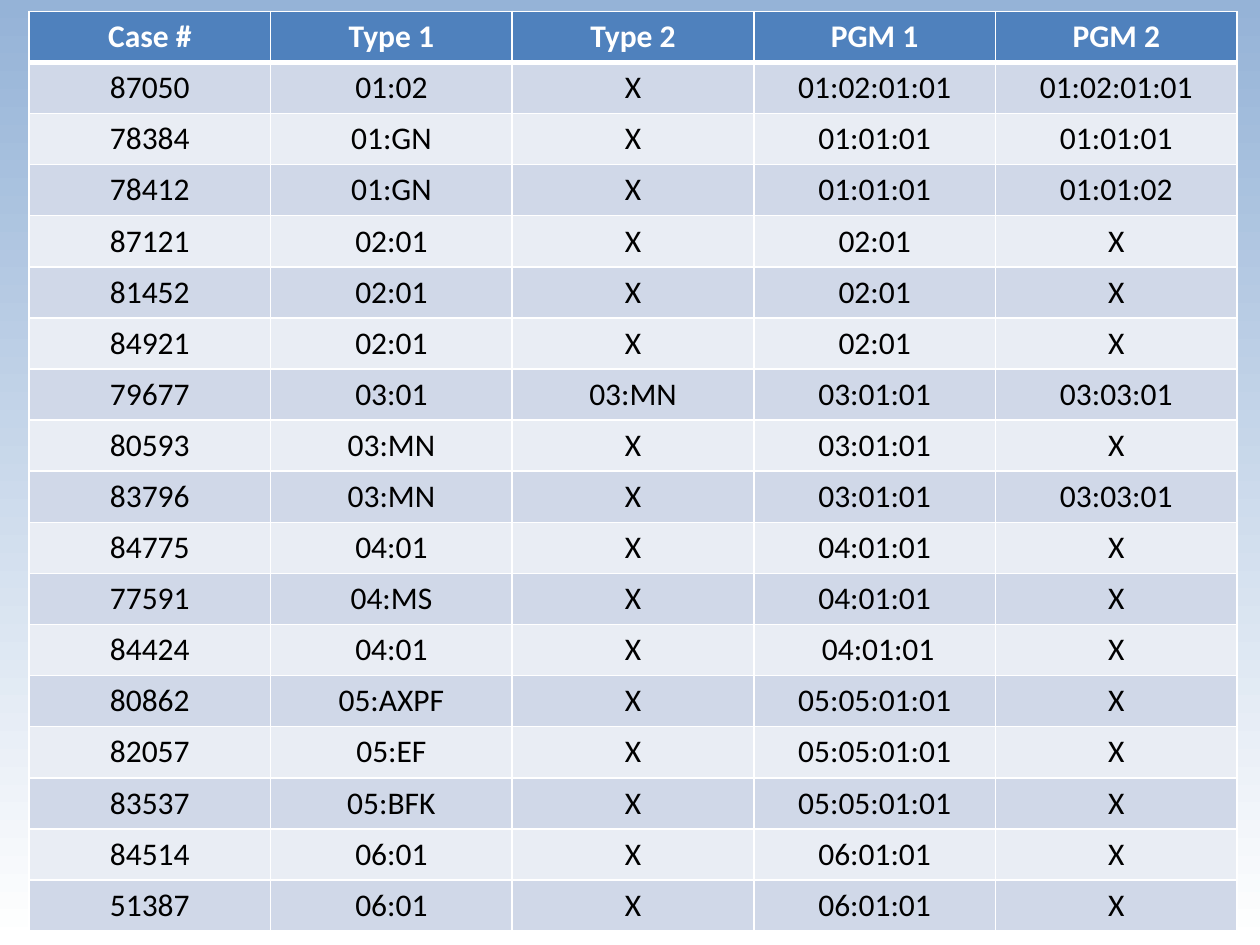
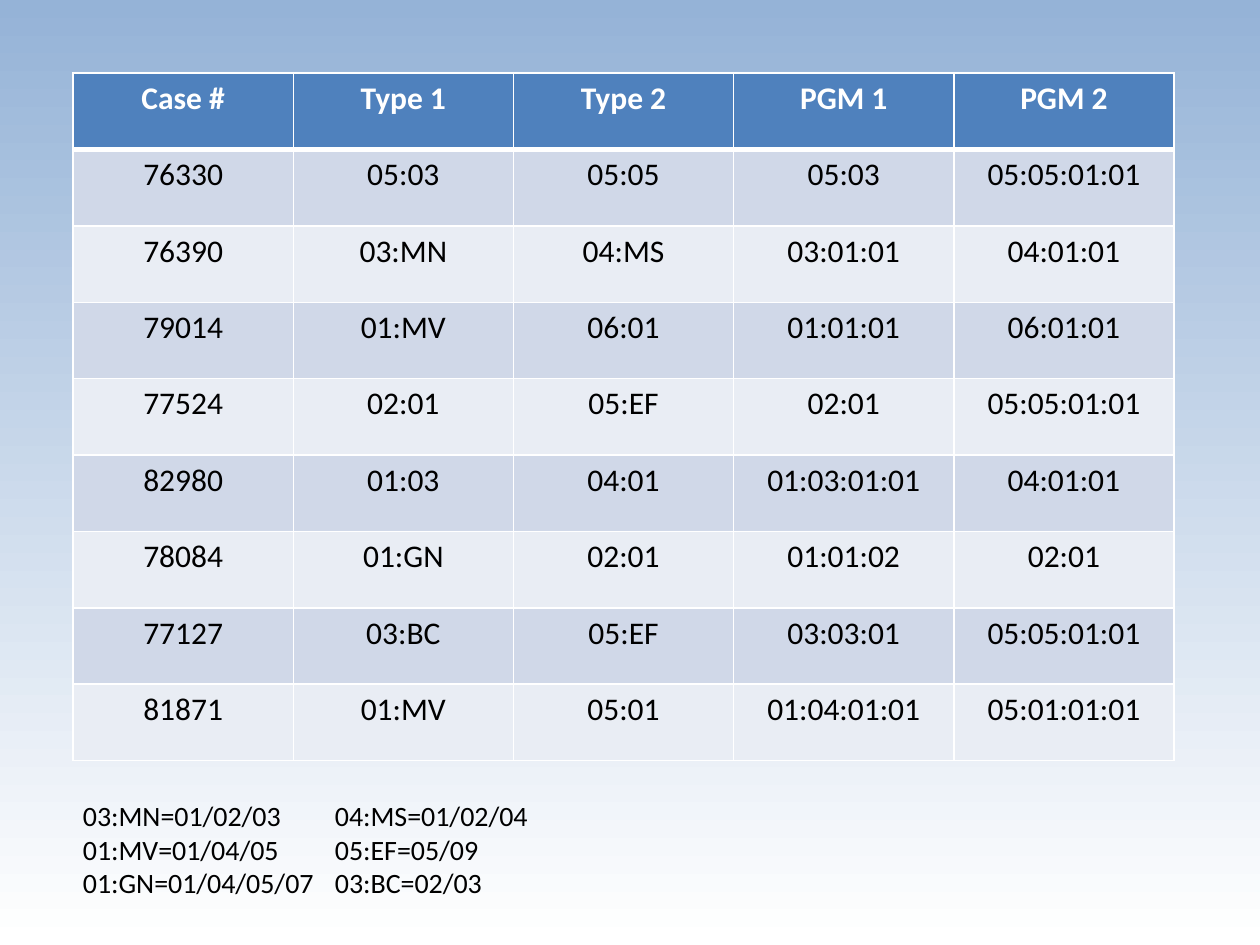
import pptx
import pptx.dml.color
import pptx.enum.text
import pptx.oxml
import pptx.oxml.ns
import pptx.util
from pptx.util import Inches

FONT = "Calibri"
WHITE = "FFFFFF"
BLACK = "000000"
SKY = "95B3D7"
HEADER_FILL = "4F81BD"
BAND_FILLS = ("D0D8E8", "E9EDF4")
THIN, THICK = 1, 3

HEADINGS = ("Case #", "Type 1", "Type 2", "PGM 1", "PGM 2")

SINGLE_TYPE_CASES = (
    ("87050", "01:02", "X", "01:02:01:01", "01:02:01:01"),
    ("78384", "01:GN", "X", "01:01:01", "01:01:01"),
    ("78412", "01:GN", "X", "01:01:01", "01:01:02"),
    ("87121", "02:01", "X", "02:01", "X"),
    ("81452", "02:01", "X", "02:01", "X"),
    ("84921", "02:01", "X", "02:01", "X"),
    ("79677", "03:01", "03:MN", "03:01:01", "03:03:01"),
    ("80593", "03:MN", "X", "03:01:01", "X"),
    ("83796", "03:MN", "X", "03:01:01", "03:03:01"),
    ("84775", "04:01", "X", "04:01:01", "X"),
    ("77591", "04:MS", "X", "04:01:01", "X"),
    ("84424", "04:01", "X", " 04:01:01", "X"),
    ("80862", "05:AXPF", "X", "05:05:01:01", "X"),
    ("82057", "05:EF", "X", "05:05:01:01", "X"),
    ("83537", "05:BFK", "X", "05:05:01:01", "X"),
    ("84514", "06:01", "X", "06:01:01", "X"),
    ("51387", "06:01", "X", "06:01:01", "X"),
)

TWO_TYPE_CASES = (
    ("76330", "05:03", "05:05", "05:03", "05:05:01:01"),
    ("76390", "03:MN", "04:MS", "03:01:01", "04:01:01"),
    ("79014", "01:MV", "06:01", "01:01:01", "06:01:01"),
    ("77524", "02:01", "05:EF", "02:01", "05:05:01:01"),
    ("82980", "01:03", "04:01", "01:03:01:01", "04:01:01"),
    ("78084", "01:GN", "02:01", "01:01:02", "02:01"),
    ("77127", "03:BC", "05:EF", "03:03:01", "05:05:01:01"),
    ("81871", "01:MV", "05:01", "01:04:01:01", "05:01:01:01"),
)

CODE_KEY = (
    "03:MN=01/02/03\t04:MS=01/02/04\v01:MV=01/04/05\t05:EF=05/09",
    "01:GN=01/04/05/07\t03:BC=02/03",
)


def color(value):
    return pptx.dml.color.RGBColor.from_string(value)


def set_background(master):
    fill = master.background.fill
    fill.gradient()
    fill.gradient_angle = 270
    for stop, value in zip(fill.gradient_stops, (SKY, WHITE)):
        stop.color.rgb = color(value)


def format_paragraph(para, size, value, bold=False):
    for span in para.runs:
        span.font.name = FONT
        span.font.size = pptx.util.Pt(size)
        span.font.bold = bold
        span.font.color.rgb = color(value)


def set_borders(cell, top, bottom):
    properties = cell._tc.get_or_add_tcPr()
    for side, width in (("L", THIN), ("R", THIN), ("T", top), ("B", bottom)):
        properties.append(pptx.oxml.parse_xml(
            f'<a:ln{side} {pptx.oxml.ns.nsdecls("a")} w="{pptx.util.Pt(width)}">'
            f'<a:solidFill><a:srgbClr val="{WHITE}"/></a:solidFill></a:ln{side}>'
        ))


def fill_cell(cell, text, row):
    header = row == 0
    set_borders(cell, THICK if row == 1 else THIN, THICK if header else THIN)
    cell.fill.solid()
    cell.fill.fore_color.rgb = color(HEADER_FILL if header else BAND_FILLS[(row - 1) % 2])
    cell.text_frame.text = text
    para = cell.text_frame.paragraphs[0]
    para.alignment = pptx.enum.text.PP_ALIGN.CENTER
    format_paragraph(para, 18, WHITE if header else BLACK, header)


def add_case_table(page, cases, left, top, width, height):
    rows = (HEADINGS, *cases)
    table = page.shapes.add_table(
        len(rows), len(HEADINGS), Inches(left), Inches(top), Inches(width), Inches(height)
    ).table
    for row, texts in enumerate(rows):
        for column, text in enumerate(texts):
            fill_cell(table.cell(row, column), text, row)


def add_code_key(page, left, top, width, height):
    box = page.shapes.add_textbox(Inches(left), Inches(top), Inches(width), Inches(height))
    frame = box.text_frame
    frame.word_wrap = True
    frame.auto_size = pptx.enum.text.MSO_AUTO_SIZE.SHAPE_TO_FIT_TEXT
    frame.text = "\n".join(CODE_KEY)
    for para in frame.paragraphs:
        format_paragraph(para, 16, BLACK)


def main():
    deck = pptx.Presentation()
    deck.slide_width, deck.slide_height = Inches(10), Inches(7.5)
    set_background(deck.slide_master)
    blank = deck.slide_layouts[6]

    page = deck.slides.add_slide(blank)
    add_case_table(page, SINGLE_TYPE_CASES, 0.23, 0.09, 9.59, 7.3)

    page = deck.slides.add_slide(blank)
    add_case_table(page, TWO_TYPE_CASES, 0.58, 0.58, 8.74, 5.46)
    add_code_key(page, 0.56, 6.29, 3.74, 0.91)

    deck.save("out.pptx")


if __name__ == "__main__":
    main()
